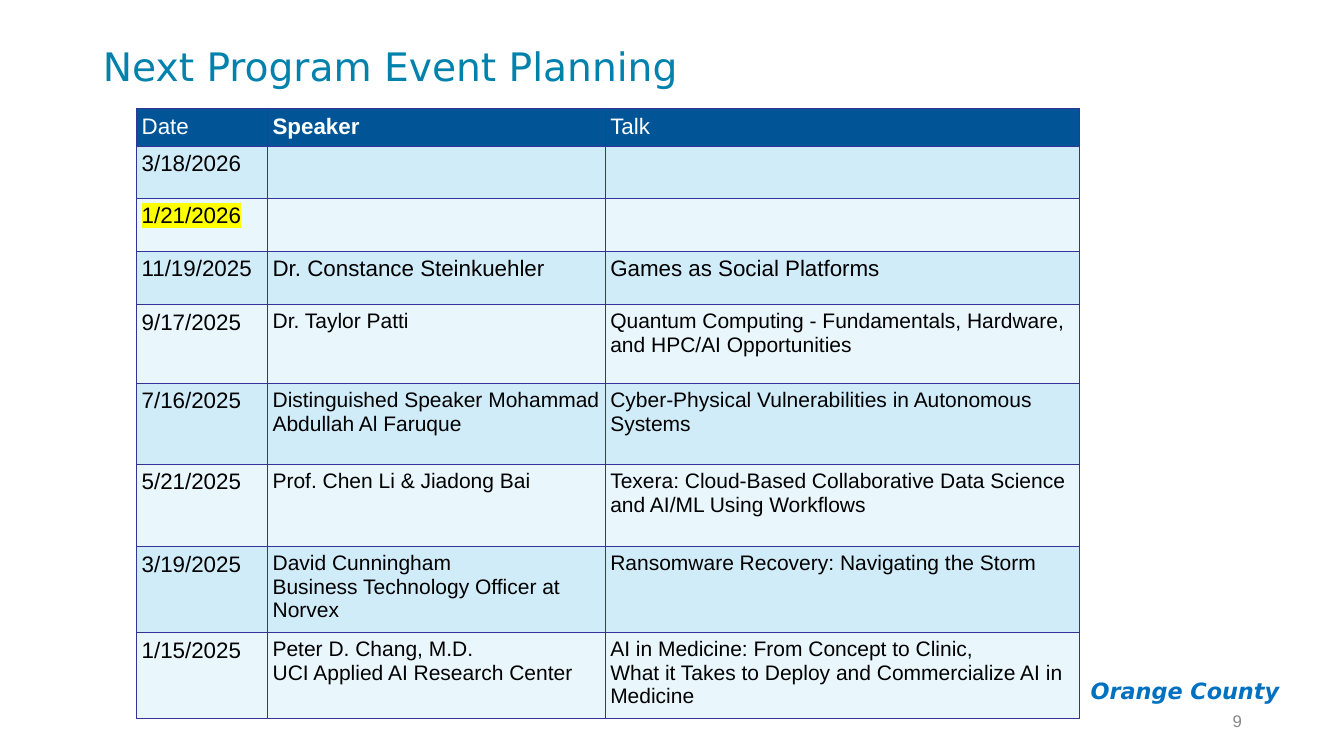
import pptx
import pptx.dml.color
import pptx.enum.text
import pptx.oxml
import pptx.oxml.ns
import pptx.util

Cm = pptx.util.Cm
RGBColor = pptx.dml.color.RGBColor
Align = pptx.enum.text.PP_ALIGN
Anchor = pptx.enum.text.MSO_ANCHOR
AutoSize = pptx.enum.text.MSO_AUTO_SIZE

TITLE_TEAL = RGBColor(0x01, 0x82, 0xAC)
CHAPTER_BLUE = RGBColor(0x00, 0x70, 0xC0)
NUMBER_GRAY = RGBColor(0x88, 0x88, 0x88)
HEADER_BLUE = RGBColor(0x01, 0x55, 0x96)
BAND_DARK = RGBColor(0xD1, 0xEC, 0xF9)
BAND_LIGHT = RGBColor(0xE9, 0xF6, 0xFC)
BORDER_INDIGO = RGBColor(0x33, 0x33, 0x99)
HIGHLIGHT_YELLOW = RGBColor(0xFF, 0xFF, 0x00)
WHITE = RGBColor(0xFF, 0xFF, 0xFF)
BLACK = RGBColor(0x00, 0x00, 0x00)

HEADINGS = ["Date", "Speaker", "Talk"]
COLUMN_WIDTHS = [3.3, 8.51, 11.96]
HEADER_HEIGHT = 0.93
NEXT_DATE = "1/21/2026"
EVENTS = [
    (1.32, 16, "3/18/2026", "", ""),
    (1.34, 16, NEXT_DATE, "", ""),
    (1.34, 16, "11/19/2025", "Dr. Constance Steinkuehler", "Games as Social Platforms"),
    (1.99, 15, "9/17/2025", "Dr. Taylor Patti",
     "Quantum Computing - Fundamentals, Hardware, and HPC/AI Opportunities"),
    (2.04, 15, "7/16/2025", "Distinguished Speaker Mohammad Abdullah Al Faruque",
     "Cyber-Physical Vulnerabilities in Autonomous Systems"),
    (2.07, 15, "5/21/2025", "Prof. Chen Li & Jiadong Bai",
     "Texera: Cloud-Based Collaborative Data Science and AI/ML Using Workflows"),
    (2.02, 15, "3/19/2025", "David Cunningham\nBusiness Technology Officer at Norvex",
     "Ransomware Recovery: Navigating the Storm"),
    (2.02, 15, "1/15/2025", "Peter D. Chang, M.D.\nUCI Applied AI Research Center",
     "AI in Medicine: From Concept to Clinic,\n"
     "What it Takes to Deploy and Commercialize AI in Medicine"),
]


def write_text(frame, text, size=16, font="Arial", color=BLACK, bold=False,
               italic=False, align=Align.LEFT, spacing=None, highlight=None):
    frame.text = text
    for para in frame.paragraphs:
        para.alignment = align
        if spacing:
            para.line_spacing = spacing
        for span in para.runs:
            span.font.size = pptx.util.Pt(size)
            span.font.name = font
            span.font.bold = bold
            span.font.italic = italic
            span.font.color.rgb = color
            if highlight:
                mark_span(span, highlight)


def mark_span(span, color):
    mark = pptx.oxml.parse_xml(
        f'<a:highlight {pptx.oxml.ns.nsdecls("a")}><a:srgbClr val="{color}"/></a:highlight>')
    span.font._element.find(pptx.oxml.ns.qn("a:solidFill")).addnext(mark)


def add_title(page, text):
    title = page.shapes.title
    title.left, title.top, title.width, title.height = Cm(2.34), Cm(0.74), Cm(29.21), Cm(1.98)
    title.text_frame.auto_size = AutoSize.NONE
    title.text_frame.vertical_anchor = Anchor.MIDDLE
    write_text(title.text_frame, text, size=28, font="DejaVu Sans",
               color=TITLE_TEAL, spacing=0.9)


def add_label(page, text, left, top, width, height, margin, anchor, **text_format):
    box = page.shapes.add_textbox(Cm(left), Cm(top), Cm(width), Cm(height))
    frame = box.text_frame
    frame.word_wrap = True
    frame.vertical_anchor = anchor
    frame.margin_left = frame.margin_right = Cm(0.25)
    frame.margin_top = frame.margin_bottom = Cm(margin)
    write_text(frame, text, align=Align.RIGHT, **text_format)


def fill_cell(cell, text, fill, **text_format):
    cell.margin_left = cell.margin_right = Cm(0.13)
    cell.margin_top = cell.margin_bottom = Cm(0.13)
    properties = cell._tc.get_or_add_tcPr()
    for side in ("lnL", "lnR", "lnT", "lnB"):
        properties.append(pptx.oxml.parse_xml(
            f'<a:{side} {pptx.oxml.ns.nsdecls("a")} w="9525"><a:solidFill>'
            f'<a:srgbClr val="{BORDER_INDIGO}"/></a:solidFill></a:{side}>'))
    cell.fill.solid()
    cell.fill.fore_color.rgb = fill
    if text:
        write_text(cell.text_frame, text, **text_format)


def add_schedule(page):
    heights = [HEADER_HEIGHT] + [event[0] for event in EVENTS]
    table = page.shapes.add_table(
        len(heights), len(HEADINGS), Cm(3.44), Cm(2.74),
        Cm(sum(COLUMN_WIDTHS)), Cm(sum(heights))).table
    table.first_row = False
    table.horz_banding = False
    for column, width in zip(table.columns, COLUMN_WIDTHS):
        column.width = Cm(width)
    for row, height in zip(table.rows, heights):
        row.height = Cm(height)
    for index, heading in enumerate(HEADINGS):
        fill_cell(table.cell(0, index), heading, HEADER_BLUE,
                  color=WHITE, bold=heading == "Speaker")
    for number, (_, size, date, speaker, talk) in enumerate(EVENTS, start=1):
        band = BAND_DARK if number % 2 else BAND_LIGHT
        fill_cell(table.cell(number, 0), date, band,
                  highlight=HIGHLIGHT_YELLOW if date == NEXT_DATE else None)
        fill_cell(table.cell(number, 1), speaker, band, size=size)
        fill_cell(table.cell(number, 2), talk, band, size=size)


def main():
    deck = pptx.Presentation()
    deck.slide_width, deck.slide_height = Cm(33.87), Cm(19.05)
    page = deck.slides.add_slide(deck.slide_layouts[5])
    add_label(page, "Orange County", 26.7, 16.81, 5.79, 1.19, 0.25, Anchor.TOP,
              font="DejaVu Sans", color=CHAPTER_BLUE, bold=True, italic=True)
    add_title(page, "Next Program Event Planning")
    add_label(page, "9", 23.93, 17.65, 7.62, 1.02, 0.13, Anchor.MIDDLE,
              size=12, color=NUMBER_GRAY)
    add_schedule(page)
    deck.save("out.pptx")


if __name__ == "__main__":
    main()
